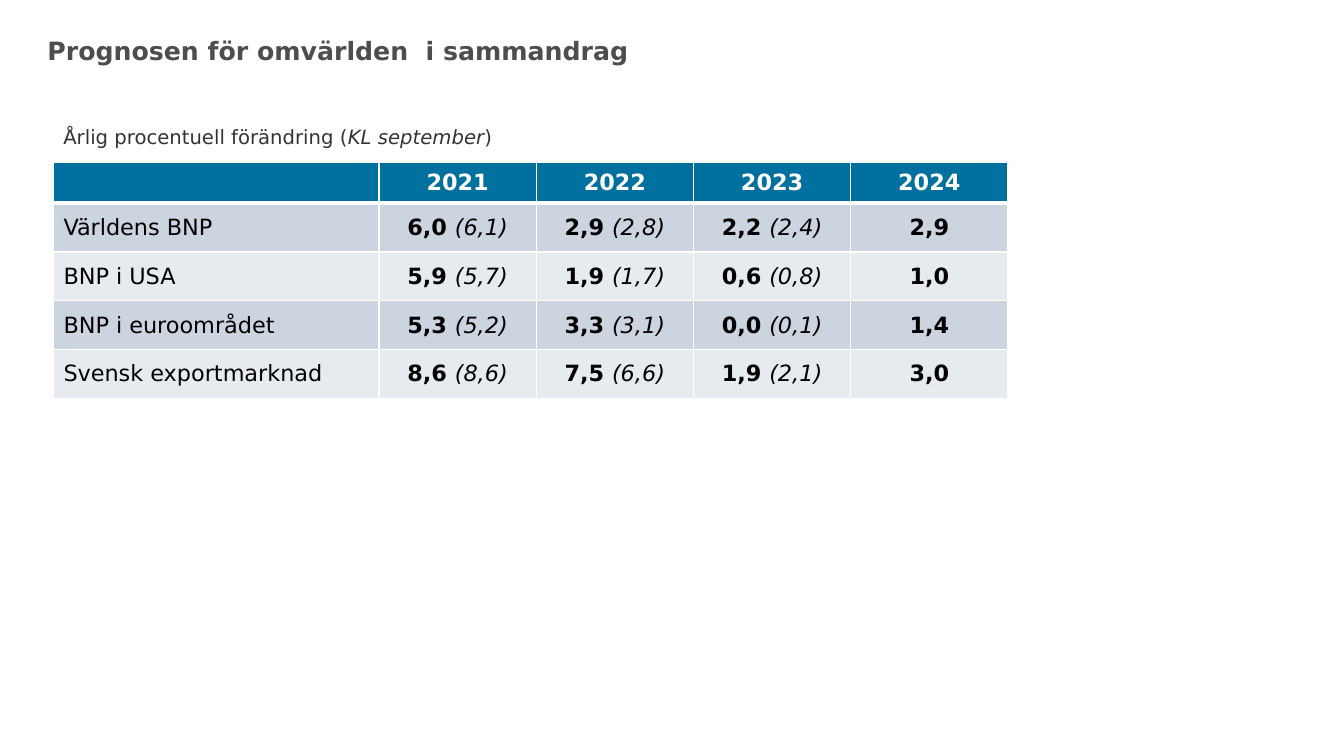
import pptx
import pptx.dml.color
import pptx.enum.text
import pptx.oxml
import pptx.oxml.ns
import pptx.util

RGBColor = pptx.dml.color.RGBColor
Align = pptx.enum.text.PP_ALIGN
Anchor = pptx.enum.text.MSO_ANCHOR

WHITE = RGBColor(0xFF, 0xFF, 0xFF)
BLACK = RGBColor(0x00, 0x00, 0x00)
GREY = RGBColor(0x4D, 0x4D, 0x4D)
DARK = RGBColor(0x33, 0x33, 0x33)
BLUE = RGBColor(0x00, 0x70, 0x9E)
BANDS = RGBColor(0xCC, 0xD5, 0xDF), RGBColor(0xE7, 0xEB, 0xF0)

COLS, ROWS = 40, 30
WIDE = 28.41  # shared width of title, caption and table

YEARS = ["", "2021", "2022", "2023", "2024"]
DATA = [
    ["Världens BNP", "6,0 (6,1)", "2,9 (2,8)", "2,2 (2,4)", "2,9"],
    ["BNP i USA", "5,9 (5,7)", "1,9 (1,7)", "0,6 (0,8)", "1,0"],
    ["BNP i euroområdet", "5,3 (5,2)", "3,3 (3,1)", "0,0 (0,1)", "1,4"],
    ["Svensk exportmarknad", "8,6 (8,6)", "7,5 (6,6)", "1,9 (2,1)", "3,0"],
]


class Sheet:
    """Holds the slide, its font and a grid of COLS by ROWS."""

    font = "DejaVu Sans"

    def __init__(self, deck):
        self.slide = deck.slides.add_slide(deck.slide_layouts[5])
        self.col = deck.slide_width / COLS
        self.row = deck.slide_height / ROWS

    def box(self, x, y, w, h):
        """Turn grid units into left, top, width and height."""
        return (round(x * self.col), round(y * self.row),
                round(w * self.col), round(h * self.row))

    def text(self, para, parts, size, color, align=Align.LEFT):
        """Fill a paragraph with (text, bold, italic) parts."""
        para.alignment = align
        for words, bold, slant in parts:
            run = para.add_run()
            run.text = words
            run.font.name = self.font
            run.font.size = pptx.util.Pt(size)
            run.font.color.rgb = color
            run.font.bold = bold
            run.font.italic = slant

    def title(self, words, *place):
        shape = self.slide.shapes.title
        shape.left, shape.top, shape.width, shape.height = self.box(*place)
        frame = shape.text_frame
        frame.word_wrap = True
        frame.vertical_anchor = Anchor.TOP
        self.text(frame.paragraphs[0], [(words, True, False)], 18, GREY)

    def label(self, parts, *place):
        frame = self.slide.shapes.add_textbox(*self.box(*place)).text_frame
        frame.word_wrap = True
        frame.vertical_anchor = Anchor.BOTTOM
        self.text(frame.paragraphs[0], parts, 14, DARK)

    def edge(self, cell, **widths):
        """Draw white cell borders; widths in points by side: L, R, T, B."""
        props = cell._tc.get_or_add_tcPr()
        for side, width in widths.items():
            props.append(pptx.oxml.parse_xml(
                f'<a:ln{side} {pptx.oxml.ns.nsdecls("a")} '
                f'w="{pptx.util.Pt(width)}"><a:solidFill>'
                f'<a:srgbClr val="{WHITE}"/></a:solidFill></a:ln{side}>'))

    def cell(self, cell, parts, fill, color, align, top, base):
        self.edge(cell, L=1, R=1, T=top, B=base)
        cell.fill.solid()
        cell.fill.fore_color.rgb = fill
        cell.vertical_anchor = Anchor.MIDDLE
        self.text(cell.text_frame.paragraphs[0], parts, 16, color, align)

    def table(self, head, data, x, y, first, other, top, high):
        """Draw head over data; first/other are widths, top/high heights."""
        wides = [first] + [other] * (len(head) - 1)
        highs = [top] + [high] * len(data)
        place = self.box(x, y, sum(wides), sum(highs))
        grid = self.slide.shapes.add_table(len(highs), len(wides), *place).table
        for col, wide in zip(grid.columns, wides):
            col.width = round(wide * self.col)
        for row, tall in zip(grid.rows, highs):
            row.height = round(tall * self.row)
        for c, year in enumerate(head):
            parts = [(year, True, False)] if year else []
            self.cell(grid.cell(0, c), parts, BLUE, WHITE, Align.CENTER, 1, 3)
        for r, line in enumerate(data, 1):
            for c, words in enumerate(line):
                parts = split(words) if c else [(words, False, False)]
                align = Align.CENTER if c else Align.LEFT
                self.cell(grid.cell(r, c), parts, BANDS[(r - 1) % 2], BLACK,
                          align, 3 if r == 1 else 1, 1)


def split(words):
    """Make the value bold and the old forecast in brackets italic."""
    value, mark, old = words.partition("(")
    parts = [(value, True, False)]
    return parts + [(mark + old, False, True)] if mark else parts


def main():
    deck = pptx.Presentation()
    deck.slide_width = pptx.util.Inches(13.33)
    deck.slide_height = pptx.util.Inches(7.5)
    sheet = Sheet(deck)
    sheet.title("Prognosen för omvärlden  i sammandrag", 1.11, 1.2, WIDE, 2.2)
    sheet.table(YEARS, DATA, 1.59, 6.44, 9.69, 4.68, 1.6, 1.94)
    sheet.label([("Årlig procentuell förändring (", False, False),
                 ("KL september", False, True),
                 (")", False, False)], 1.59, 3.88, WIDE, 2.2)
    deck.save("out.pptx")


if __name__ == "__main__":
    main()
